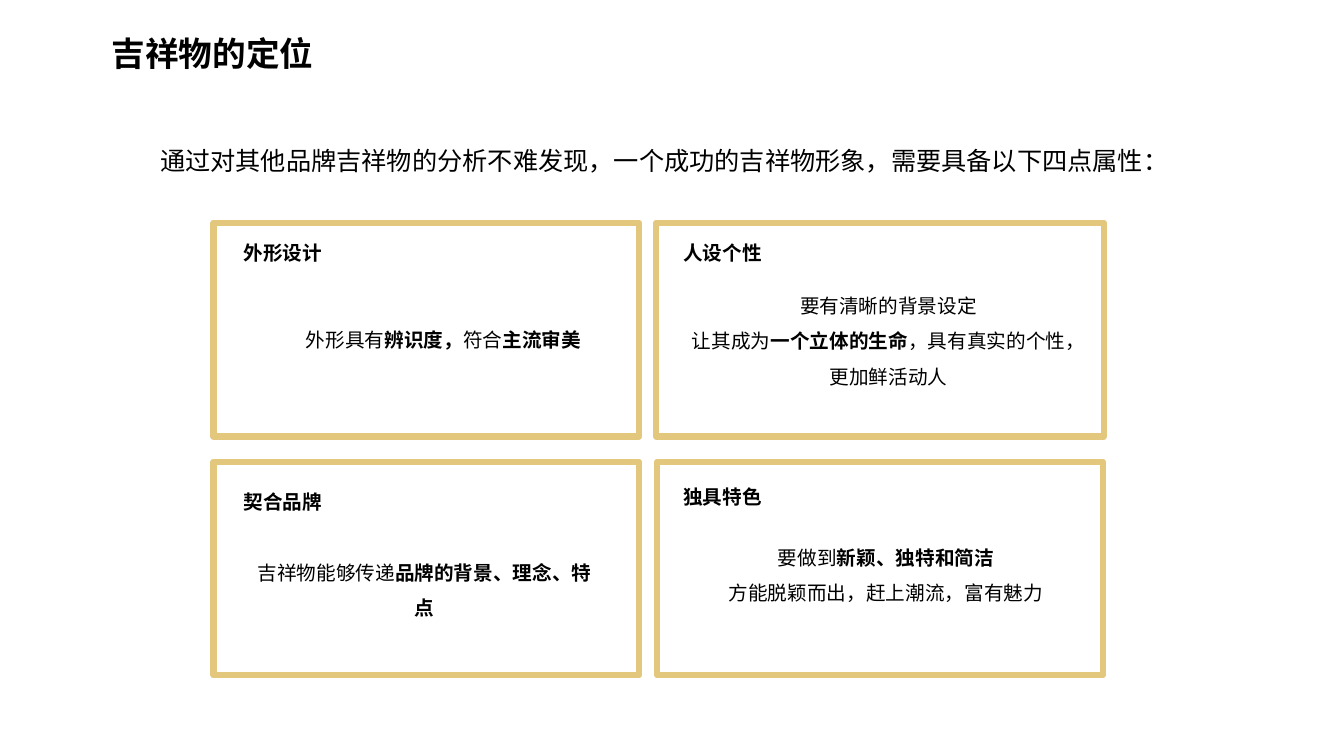
from lxml import etree
from pptx import Presentation
from pptx.dml.color import RGBColor
from pptx.enum.shapes import MSO_SHAPE
from pptx.enum.text import MSO_AUTO_SIZE, PP_ALIGN
from pptx.oxml.ns import qn
from pptx.util import Inches, Pt

RECTANGLE = MSO_SHAPE.RECTANGLE
GROW = MSO_AUTO_SIZE.SHAPE_TO_FIT_TEXT
LEFT, CENTER = PP_ALIGN.LEFT, PP_ALIGN.CENTER

COLORS = {"text": "000000", "frame": "E3C77D"}
FONT = "Noto Sans CJK SC"
COLUMNS, ROWS = 160, 90

# Text formats
TITLE = {"size": Pt(24), "bold": True}
INTRO = {"size": Pt(18), "bold": False}
HEADING = {"size": Pt(14), "bold": True}
BODY = {"size": Pt(14), "bold": False}

# Frame position, heading position, body position, body paragraphs;
# each paragraph alternates between regular and bold runs
CARD_HEIGHT = 25.44
HEADING_SIZE = (11.88, 4.08)
CARDS = [
    ("外形设计", (25.44, 26.52, 50.64), (27.84, 28.08), (31.08, 37.08, 43.44, 5.04),
     [["外形具有", "辨识度，", "符合", "主流审美"]]),
    ("人设个性", (78.12, 26.52, 53.28), (80.16, 28.08), (80.16, 33, 51.24, 13.92),
     [["要有清晰的背景设定"],
      ["让其成为", "一个立体的生命", "，具有真实的个性，更加鲜活动人"]]),
    ("契合品牌", (25.44, 54.96, 50.64), (27.84, 57.72), (28.4, 64.8, 44.3, 9.24),
     [["吉祥物能够传递", "品牌的背景、理念、特点"]]),
    ("独具特色", (78.24, 54.96, 53.04), (80.16, 57.12), (79.56, 63, 51.84, 13.44),
     [["要做到", "新颖、独特和简洁"],
      ["方能脱颖而出，赶上潮流，富有魅力"]]),
]


class SlideBuilder:
    """Places styled elements on a grid of COLUMNS by ROWS cells."""

    def __init__(self, presentation):
        self.slide = presentation.slides.add_slide(presentation.slide_layouts[6])
        self.column = presentation.slide_width / COLUMNS
        self.row = presentation.slide_height / ROWS

    def place(self, box):
        left, top, width, height = box
        return (round(left * self.column), round(top * self.row),
                round(width * self.column), round(height * self.row))

    def add_run(self, paragraph, text, style):
        run = paragraph.add_run()
        run.text = text
        for name, value in {**style, "name": FONT}.items():
            setattr(run.font, name, value)
        run.font.color.rgb = RGBColor.from_string(COLORS["text"])
        # East Asian typeface
        east_asian = etree.SubElement(run.font._element, qn("a:ea"))
        east_asian.set("typeface", FONT)

    def text(self, box, paragraphs, style, align=LEFT, spacing=1.0, wrap=True):
        frame = self.slide.shapes.add_textbox(*self.place(box)).text_frame
        frame.word_wrap = wrap
        frame.auto_size = GROW
        for index, runs in enumerate(paragraphs):
            paragraph = frame.add_paragraph() if index else frame.paragraphs[0]
            for name, value in {"alignment": align, "line_spacing": spacing}.items():
                setattr(paragraph, name, value)
            for position, text in enumerate(runs):
                bold = style["bold"] or position % 2 == 1
                self.add_run(paragraph, text, {**style, "bold": bold})

    def frame(self, box):
        shape = self.slide.shapes.add_shape(RECTANGLE, *self.place(box))
        shape.shadow.inherit = False
        shape.fill.background()
        shape.line.color.rgb = RGBColor.from_string(COLORS["frame"])
        shape.line.width = Pt(4.5)

    def card(self, heading, frame_box, heading_at, body_box, paragraphs):
        self.text(heading_at + HEADING_SIZE, [[heading]], HEADING, wrap=False)
        self.frame(frame_box + (CARD_HEIGHT,))
        self.text(body_box, paragraphs, BODY, align=CENTER, spacing=1.5)


def main():
    presentation = Presentation()
    presentation.slide_width = Inches(13.33)
    presentation.slide_height = Inches(7.5)
    builder = SlideBuilder(presentation)

    # Title and introduction
    builder.text((12.12, 3.36, 47.16, 6), [["吉祥物的定位"]], TITLE)
    builder.text((17.88, 14.88, 127.56, 6.72),
                 [["通过对其他品牌吉祥物的分析不难发现，一个成功的吉祥物形象，需要具备以下四点属性："]],
                 INTRO, spacing=1.5)

    # Four attribute cards
    for card in CARDS:
        builder.card(*card)

    presentation.save("out.pptx")


if __name__ == "__main__":
    main()
